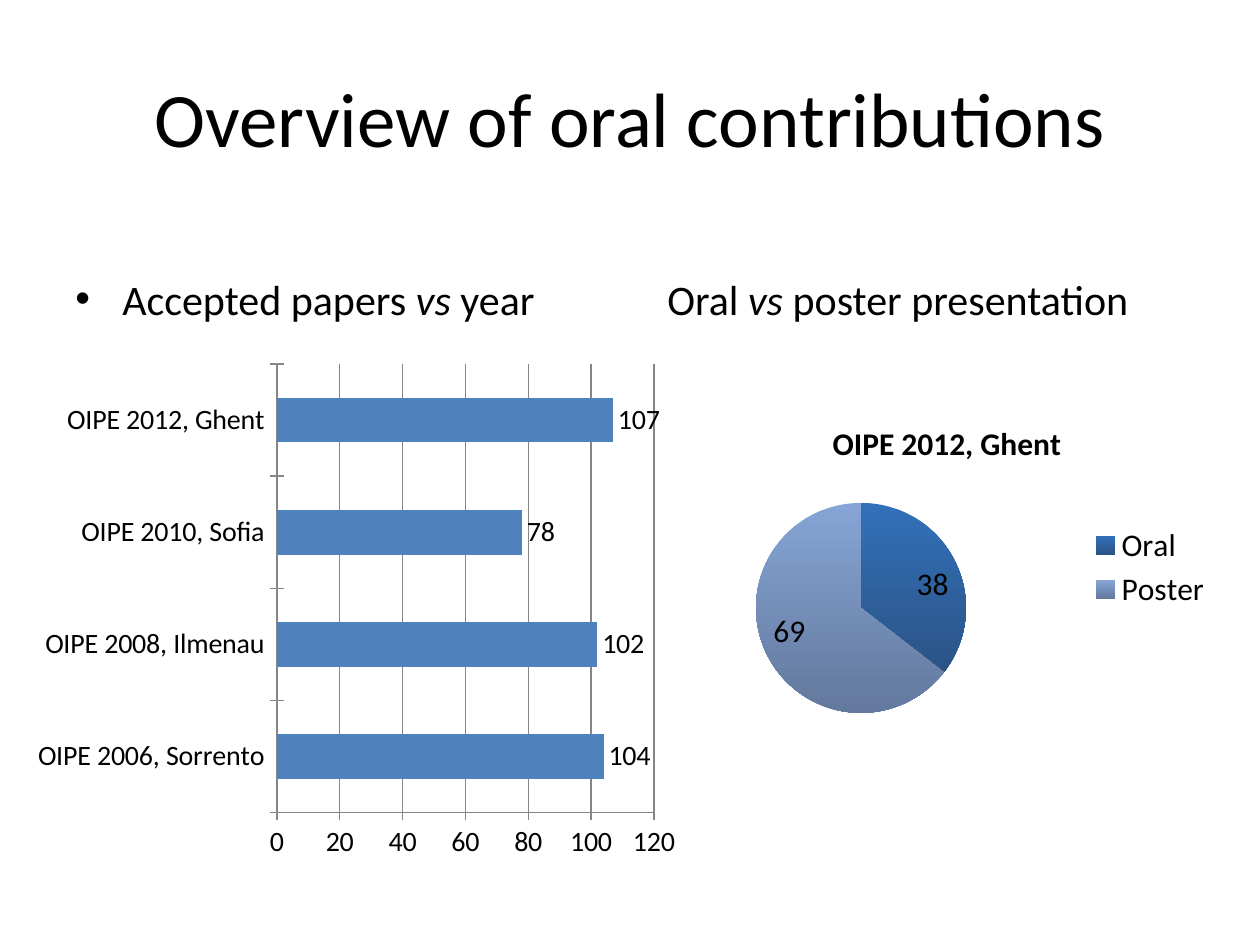
from lxml import etree
from pptx import Presentation
from pptx.chart.data import CategoryChartData
from pptx.dml.color import RGBColor
from pptx.enum.chart import (XL_CHART_TYPE, XL_LABEL_POSITION,
                             XL_LEGEND_POSITION, XL_TICK_MARK)
from pptx.enum.text import MSO_ANCHOR, PP_ALIGN
from pptx.oxml.ns import qn
from pptx.util import Emu, Pt

BAR, PIE = XL_CHART_TYPE.BAR_CLUSTERED, XL_CHART_TYPE.PIE
OUT, IN = XL_LABEL_POSITION.OUTSIDE_END, XL_LABEL_POSITION.INSIDE_END
RIGHT = XL_LEGEND_POSITION.RIGHT
CROSS = XL_TICK_MARK.CROSS
MIDDLE, CENTER = MSO_ANCHOR.MIDDLE, PP_ALIGN.CENTER

FACE = "Calibri"
COLORS = {"text": "000000", "bar": "4F81BD", "line": "868686"}
SLICES = [("3370BA", "2B5485"), ("86A4D5", "63799D")]


def px(n):
    return Emu(round(n * 914400 / 126))


def rgb(name):
    return RGBColor.from_string(COLORS[name])


def style(font, size, bold=False, italic=False):
    font.name, font.size = FACE, Pt(size)
    font.bold, font.italic = bold, italic
    font.color.rgb = rgb("text")


def add_text(slide, box):
    frame = slide.shapes.add_textbox(*map(px, box)).text_frame
    frame.word_wrap = True
    return frame


def add_title(slide, box):
    frame = add_text(slide, box)
    frame.vertical_anchor = MIDDLE
    para = frame.paragraphs[0]
    para.text = "Overview of oral contributions"
    para.alignment = CENTER
    style(para.runs[0].font, 44)


def add_heads(slide, box, indent, tab):
    """Put both chart headings on one bulleted line, parted by a tab stop."""
    para = add_text(slide, box).paragraphs[0]
    parts = ["Accepted papers ", "vs", " year\tOral ", "vs",
             " poster presentation"]
    for part in parts:
        run = para.add_run()
        run.text = part
        style(run.font, 24, italic=part == "vs")
    props = para._p.get_or_add_pPr()
    props.set("marL", str(px(indent)))
    props.set("indent", str(-px(indent)))
    etree.SubElement(props, qn("a:buFont"), typeface="Arial")
    etree.SubElement(props, qn("a:buChar"), char="•")
    tabs = etree.SubElement(props, qn("a:tabLst"))
    etree.SubElement(tabs, qn("a:tab"), pos=str(px(tab)), algn="l")


def add_chart(slide, box, kind, name, rows, size):
    data = CategoryChartData()
    data.categories = [label for label, _ in rows]
    data.add_series(name, [value for _, value in rows])
    chart = slide.shapes.add_chart(kind, *map(px, box), data).chart
    style(chart.font, size)
    return chart


def place_plot(chart, box, plot):
    """Fix the inner plot area; plot is in px from the corner of box."""
    area = chart._chartSpace.chart.plotArea
    for old in area.findall(qn("c:layout")):
        area.remove(old)
    layout = etree.Element(qn("c:layout"))
    area.insert(0, layout)
    manual = etree.SubElement(layout, qn("c:manualLayout"))
    etree.SubElement(manual, qn("c:layoutTarget"), val="inner")
    for mode in ("xMode", "yMode"):
        etree.SubElement(manual, qn("c:" + mode), val="edge")
    for key, part, whole in zip("xywh", plot, box[2:] * 2):
        etree.SubElement(manual, qn("c:" + key), val=f"{part / whole:.4f}")


def add_labels(plot, size, spot):
    plot.has_data_labels = True
    labels = plot.data_labels
    labels.show_value = True
    labels.position = spot
    style(labels.font, size)


def add_bars(slide, box):
    rows = [("OIPE 2006, Sorrento", 104), ("OIPE 2008, Ilmenau", 102),
            ("OIPE 2010, Sofia", 78), ("OIPE 2012, Ghent", 107)]
    chart = add_chart(slide, box, BAR, "Series 1", rows, 16)
    chart.has_legend = chart.has_title = False
    place_plot(chart, box, (252, 10, 377, 449))
    plot = chart.plots[0]
    plot.gap_width, plot.vary_by_categories = 150, False
    fill = plot.series[0].format.fill
    fill.solid()
    fill.fore_color.rgb = rgb("bar")
    add_labels(plot, 16, OUT)
    values = chart.value_axis
    values.minimum_scale, values.maximum_scale = 0, 120
    values.major_unit = 20
    values.has_major_gridlines = True
    values.major_gridlines.format.line.color.rgb = rgb("line")
    for axis in (values, chart.category_axis):
        axis.major_tick_mark = CROSS
        axis.format.line.color.rgb = rgb("line")


def add_pie(slide, box):
    name = "OIPE 2012, Ghent"
    chart = add_chart(slide, box, PIE, name, [("Oral", 38), ("Poster", 69)], 10)
    chart.has_title = True
    title = chart.chart_title.text_frame
    title.text = name
    style(title.paragraphs[0].runs[0].font, 18, bold=True)
    chart.has_legend = True
    chart.legend.position = RIGHT
    chart.legend.include_in_layout = False
    style(chart.legend.font, 18)
    place_plot(chart, box, (87, 100, 210, 210))
    plot = chart.plots[0]
    plot.vary_by_categories = True
    add_labels(plot, 18, IN)
    for i, shades in enumerate(SLICES):
        fill = plot.series[0].points[i].format.fill
        fill.gradient()
        fill.gradient_angle = 270
        for stop, shade in zip(fill.gradient_stops, shades):
            stop.color.rgb = RGBColor.from_string(shade)


def main():
    deck = Presentation()
    deck.slide_width, deck.slide_height = px(1260), px(945)
    slide = deck.slides.add_slide(deck.slide_layouts[6])
    add_title(slide, (63, 38, 1134, 158))
    add_heads(slide, (63, 267, 1134, 580), 47, 592)
    add_bars(slide, (25, 354, 664, 517))
    add_pie(slide, (669, 403, 556, 329))
    deck.save("out.pptx")


if __name__ == "__main__":
    main()
